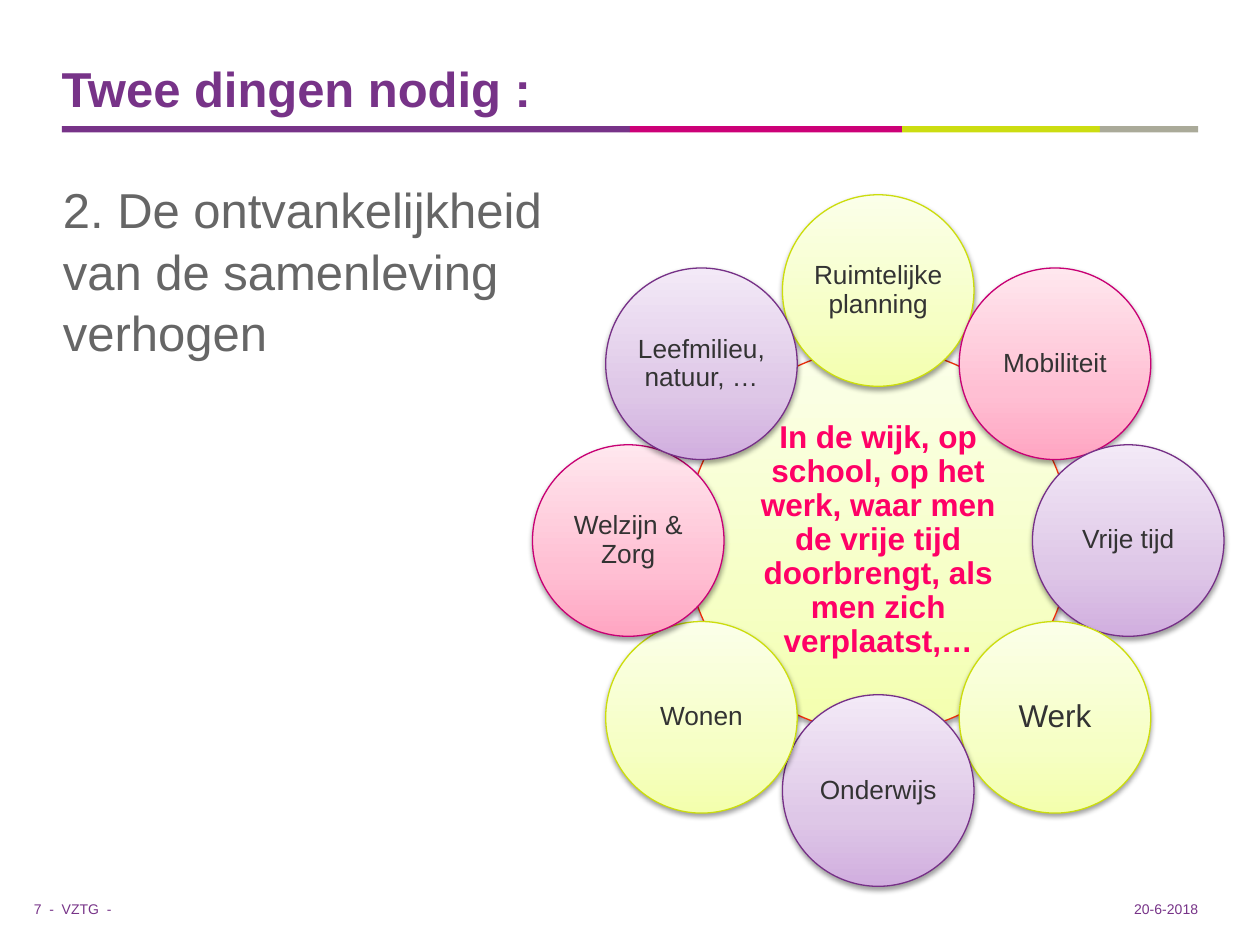
import copy
import math

import lxml.etree
import pptx
import pptx.dml.color
import pptx.enum.shapes
import pptx.enum.text
import pptx.oxml.ns
import pptx.util

ALIGN = pptx.enum.text.PP_ALIGN
ANCHOR = pptx.enum.text.MSO_ANCHOR
SHAPE = pptx.enum.shapes.MSO_SHAPE
QN = pptx.oxml.ns.qn

PURPLE, MAGENTA, LIME, GREY = "773388", "CC0077", "CCDD11", "AAAA99"
LIME_STOPS = ("F3FFAD", "F6FFC5", "FBFFE9")
PINK_STOPS = ("FFA5C2", "FFBFD3", "FFE7EE")
LILAC_STOPS = ("D1AEDF", "DEC7E7", "F3E9F7")
LIME_CIRCLE = (LIME_STOPS, "CCDD0C")
PINK_CIRCLE = (PINK_STOPS, "C80074")
LILAC_CIRCLE = (LILAC_STOPS, "763087")


def color(value):
    return pptx.dml.color.RGBColor.from_string(value)


class SlideBuilder:
    """Draw styled elements on a slide divided into 100 columns and 75 rows."""

    columns, rows = 100, 75
    font = "Arial"

    def __init__(self, presentation):
        self.cell_width = presentation.slide_width / self.columns
        self.cell_height = presentation.slide_height / self.rows
        self.slide = presentation.slides.add_slide(presentation.slide_layouts[6])

    def box(self, column, row, width, height):
        return (round(column * self.cell_width), round(row * self.cell_height),
                round(width * self.cell_width), round(height * self.cell_height))

    def fill_text(self, shape, text, size, hex_color, bold=False, align=ALIGN.LEFT,
                  anchor=ANCHOR.TOP, inset=0, spacing=1.0):
        frame = shape.text_frame
        frame.word_wrap = True
        frame.vertical_anchor = anchor
        frame.margin_left = frame.margin_right = pptx.util.Inches(inset)
        frame.margin_top = frame.margin_bottom = pptx.util.Inches(inset)
        paragraph = frame.paragraphs[0]
        paragraph.text = text
        paragraph.alignment = align
        paragraph.line_spacing = spacing
        paragraph.font.name = self.font
        paragraph.font.size = pptx.util.Pt(size)
        paragraph.font.bold = bold
        paragraph.font.color.rgb = color(hex_color)

    def text(self, place, text, size, hex_color, **style):
        shape = self.slide.shapes.add_textbox(*self.box(*place))
        self.fill_text(shape, text, size, hex_color, **style)

    def bar(self, place, hex_color):
        shape = self.slide.shapes.add_shape(SHAPE.RECTANGLE, *self.box(*place))
        shape.shadow.inherit = False
        shape.fill.solid()
        shape.fill.fore_color.rgb = color(hex_color)
        shape.line.fill.background()

    def circle(self, center, diameter, stops, outline, text, size,
               hex_color="333333", bold=False):
        left, top = (middle - diameter / 2 for middle in center)
        shape = self.slide.shapes.add_shape(
            SHAPE.OVAL, *self.box(left, top, diameter, diameter))
        self.gradient(shape, stops)
        self.shadow(shape)
        shape.line.color.rgb = color(outline)
        shape.line.width = pptx.util.Pt(0.75)
        self.fill_text(shape, text, size, hex_color, bold=bold, align=ALIGN.CENTER,
                       anchor=ANCHOR.MIDDLE, inset=0.02, spacing=0.9)

    def gradient(self, shape, stops):
        shape.fill.gradient()
        shape.fill.gradient_angle = 90
        stop_list = next(shape._element.spPr.iter(QN("a:gsLst")))
        stop_list.append(copy.deepcopy(stop_list[-1]))
        for stop, position, value in zip(shape.fill.gradient_stops, (0, 0.35, 1), stops):
            stop.position = position
            stop.color.rgb = color(value)

    def shadow(self, shape):
        shape.shadow.inherit = False
        effects = shape._element.spPr.find(QN("a:effectLst"))
        outer = lxml.etree.SubElement(
            effects, QN("a:outerShdw"), blurRad="40000", dist="20000",
            dir="5400000", rotWithShape="0")
        black = lxml.etree.SubElement(outer, QN("a:srgbClr"), val="000000")
        lxml.etree.SubElement(black, QN("a:alpha"), val="38000")


def main():
    presentation = pptx.Presentation()
    presentation.slide_width = pptx.util.Inches(10)
    presentation.slide_height = pptx.util.Inches(7.5)
    builder = SlideBuilder(presentation)

    edges = (4.9, 50, 71.6, 87.3, 95.1)
    for left, right, value in zip(edges, edges[1:], (PURPLE, MAGENTA, LIME, GREY)):
        builder.bar((left, 10, right - left, 0.5), value)

    builder.text((4.9, 0, 80.4, 9.3), "Twee dingen nodig :", 28, PURPLE,
                 bold=True, anchor=ANCHOR.BOTTOM)
    builder.text((5, 14, 43, 54.9), "2. De ontvankelijkheid van de samenleving verhogen",
                 28, "666666", spacing=1.05)
    for left, width, text, align in (
            (0, 4.3, "7  -", ALIGN.RIGHT),
            (4.9, 4.7, "VZTG  -", ALIGN.LEFT),
            (87.3, 7.8, "20-6-2018", ALIGN.RIGHT)):
        builder.text((left, 71.5, width, 1.3), text, 8, PURPLE,
                     align=align, anchor=ANCHOR.BOTTOM)

    center_column, center_row, orbit = 69.7, 42.9, 19.84
    builder.circle(
        (center_column, center_row), 30.5, LIME_STOPS, "EE2E0B",
        "In de wijk, op school, op het werk, waar men de vrije tijd doorbrengt, "
        "als men zich verplaatst,…", 18, "FF0066", bold=True)
    domains = (
        ("Ruimtelijke planning", LIME_CIRCLE, 15),
        ("Mobiliteit", PINK_CIRCLE, 15),
        ("Vrije tijd", LILAC_CIRCLE, 15),
        ("Werk", LIME_CIRCLE, 18),
        ("Onderwijs", LILAC_CIRCLE, 15),
        ("Wonen", LIME_CIRCLE, 15),
        ("Welzijn & Zorg", PINK_CIRCLE, 15),
        ("Leefmilieu, natuur, …", LILAC_CIRCLE, 15),
    )
    for index, (text, (stops, outline), size) in enumerate(domains):
        angle = math.tau * index / len(domains)
        center = (center_column + orbit * math.sin(angle),
                  center_row - orbit * math.cos(angle))
        builder.circle(center, 15.2, stops, outline, text, size)

    presentation.save("out.pptx")


if __name__ == "__main__":
    main()
